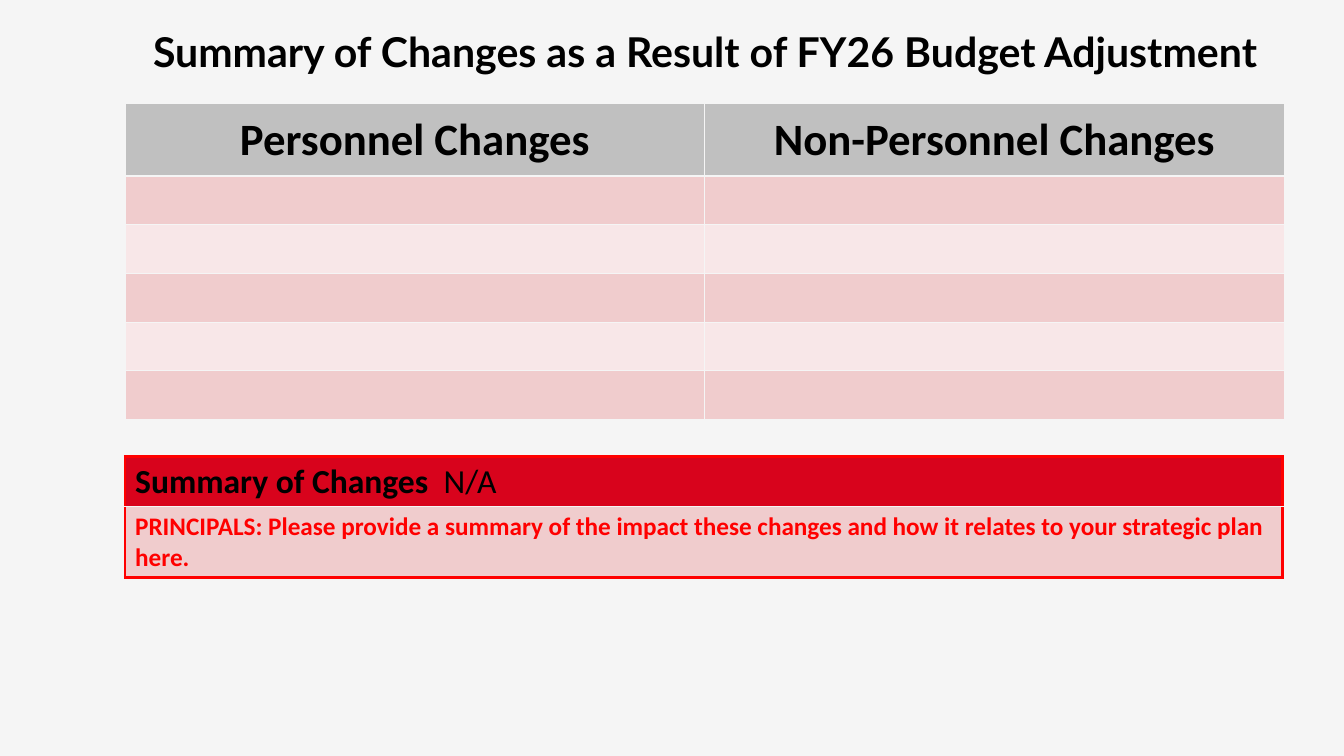
import dataclasses

import pptx
import pptx.dml.color
import pptx.enum.text
import pptx.oxml
import pptx.oxml.ns
import pptx.util

Pt = pptx.util.Pt
ALIGN = pptx.enum.text.PP_ALIGN
ANCHOR = pptx.enum.text.MSO_ANCHOR


@dataclasses.dataclass(frozen=True)
class Theme:
    # Colours
    page: str = "F5F5F5"
    ink: str = "000000"
    gray: str = "C0C0C0"
    dark: str = "F0CCCD"
    light: str = "F8E7E8"
    red: str = "D8031C"
    alert: str = "FF0000"
    # Fonts and type sizes
    head_font: str = "Lato"
    font: str = "Calibri"
    title: int = 44
    head: int = 48
    label: int = 36
    note: int = 27


THEME = Theme()


def rgb(code):
    return pptx.dml.color.RGBColor.from_string(code)


def write(para, text, size, font=THEME.font, color=THEME.ink, bold=True, align=ALIGN.LEFT):
    """Add one formatted run to a paragraph."""
    para.alignment = align
    run = para.add_run()
    run.text = text
    run.font.size = Pt(size)
    run.font.name = font
    run.font.bold = bold
    run.font.color.rgb = rgb(color)


def border(cell, **sides):
    """Set cell borders; each side is a (colour, width) pair."""
    props = cell._tc.get_or_add_tcPr()
    for side in "LRTB":
        color, width = sides.get(side, (THEME.page, 1))
        props.append(pptx.oxml.parse_xml(
            f'<a:ln{side} {pptx.oxml.ns.nsdecls("a")} w="{Pt(width)}">'
            f'<a:solidFill><a:srgbClr val="{color}"/></a:solidFill></a:ln{side}>'))


def paint(cell, fill, anchor=ANCHOR.TOP, **sides):
    """Give a cell its borders, fill, margins and anchor."""
    border(cell, **sides)
    cell.fill.solid()
    cell.fill.fore_color.rgb = rgb(fill)
    cell.margin_left = cell.margin_right = Pt(10.8)
    cell.margin_top = cell.margin_bottom = Pt(5)
    cell.vertical_anchor = anchor


def grid(slide, left, top, width, cols, rows):
    """Add a table with equal columns and the given row heights."""
    table = slide.shapes.add_table(
        len(rows), cols, Pt(left), Pt(top), Pt(width), Pt(sum(rows))).table
    for col in table.columns:
        col.width = Pt(width / cols)
    for row, height in zip(table.rows, rows):
        row.height = Pt(height)
    return table


def add_title(slide, text):
    box = slide.shapes.add_textbox(Pt(108), Pt(24.5), Pt(1296), Pt(98.6))
    box.text_frame.word_wrap = True
    write(box.text_frame.paragraphs[0], text, THEME.title,
          font=THEME.head_font, align=ALIGN.CENTER)


def add_changes(slide, heads, count):
    table = grid(slide, 134, 111, 1242, len(heads), [77.8] + [52.1] * count)
    # Header row
    for col, text in enumerate(heads):
        cell = table.cell(0, col)
        paint(cell, THEME.gray, ANCHOR.MIDDLE, B=(THEME.page, 3))
        write(cell.text_frame.paragraphs[0], text, THEME.head, align=ALIGN.CENTER)
    # Empty banded rows
    for row in range(1, count + 1):
        for col in range(len(heads)):
            paint(table.cell(row, col), THEME.dark if row % 2 else THEME.light,
                  T=(THEME.page, 3 if row == 1 else 1))


def add_summary(slide, label, value, note):
    table = grid(slide, 134, 489, 1240, 1, [54, 75.6])
    edge = (THEME.alert, 3)
    # Label row
    top = table.cell(0, 0)
    paint(top, THEME.red, L=edge, R=edge, T=edge)
    para = top.text_frame.paragraphs[0]
    write(para, label, THEME.label)
    write(para, value, THEME.label, bold=False)
    # Note row
    base = table.cell(1, 0)
    paint(base, THEME.dark, L=edge, R=edge, B=edge)
    write(base.text_frame.paragraphs[0], note, THEME.note, color=THEME.alert)


def main():
    deck = pptx.Presentation()
    deck.slide_width, deck.slide_height = Pt(1440), Pt(810)
    slide = deck.slides.add_slide(deck.slide_layouts[6])
    slide.background.fill.solid()
    slide.background.fill.fore_color.rgb = rgb(THEME.page)

    add_title(slide, "Summary of Changes as a Result of FY26 Budget Adjustment")
    add_changes(slide, ["Personnel Changes", "Non-Personnel Changes"], 5)
    add_summary(slide, "Summary of Changes ", " N/A",
                "PRINCIPALS: Please provide a summary of the impact these changes "
                "and how it relates to your strategic plan here.")
    deck.save("out.pptx")


if __name__ == "__main__":
    main()
